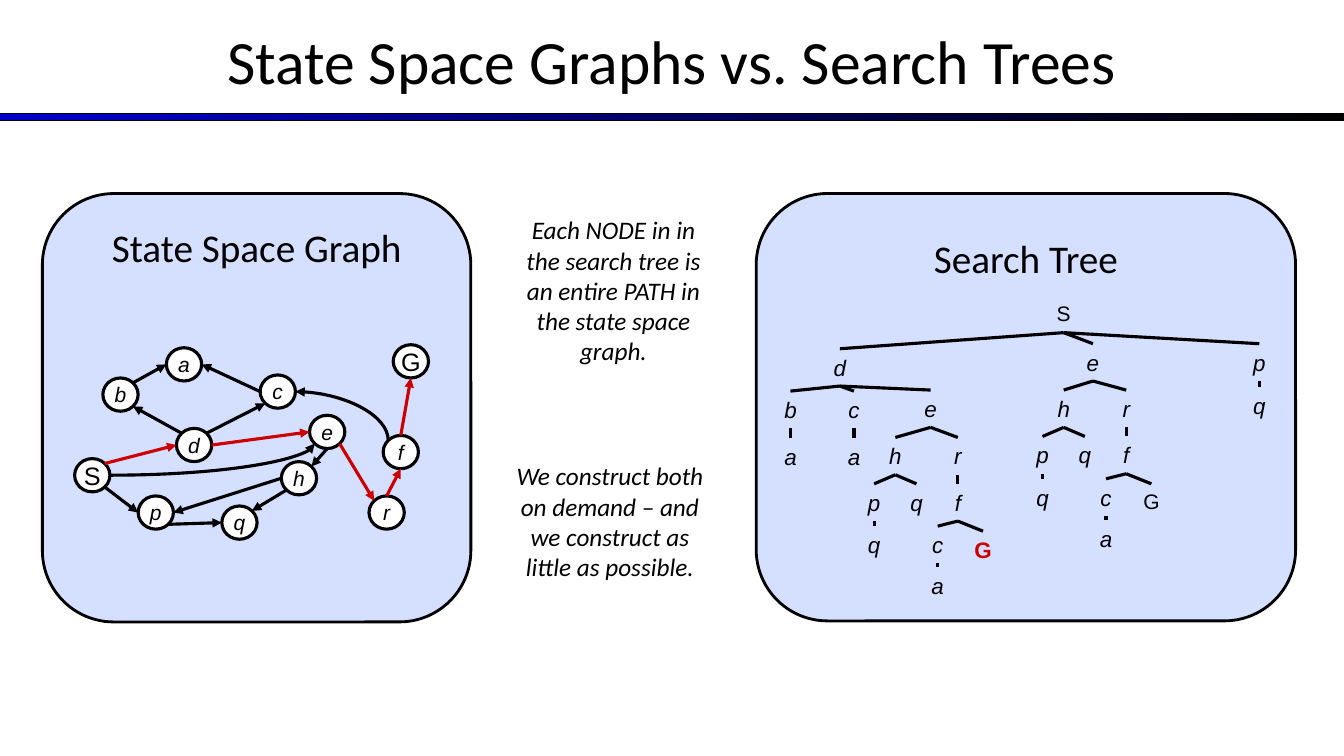
from math import copysign, sqrt

from lxml.etree import SubElement
from pptx import Presentation
from pptx.dml.color import RGBColor
from pptx.enum.shapes import MSO_CONNECTOR as LINK, MSO_SHAPE as SHAPE
from pptx.enum.text import MSO_ANCHOR as ANCHOR, PP_ALIGN as ALIGN
from pptx.oxml.ns import qn
from pptx.util import Emu, Pt

BLACK = RGBColor(0x00, 0x00, 0x00)
WHITE = RGBColor(0xFF, 0xFF, 0xFF)
RED = RGBColor(0xCC, 0x00, 0x00)
BLUE = RGBColor(0x00, 0x00, 0xCC)
PANEL = RGBColor(0xD5, 0xDF, 0xFF)

PX = 9144
SLIDE_W, SLIDE_H = 1333, 750
NODE_W, NODE_H = 35, 33
LABEL_W, GOAL_W, LABEL_H = 35, 69, 37

PANELS = [(750, 192, 535, 424), (42, 192, 425, 425)]
TEXTS = [
    ("State Space Graphs vs. Search Trees", (0, -3, 1333, 125), dict(size=44, anchor=ANCHOR.MIDDLE)),
    ("We construct both on demand – and we construct as little as possible.",
     (492, 452, 226, 131), dict(size=18, italic=True)),
    ("Each NODE in in the search tree is an entire PATH in the state space graph.",
     (500, 208, 217, 162), dict(size=18, italic=True)),
    ("Search Tree", (751, 228, 533, 57), dict(size=28)),
    ("State Space Graph", (67, 217, 375, 57), dict(size=28)),
]

NODES = {
    "S": (74, 455), "G": (390, 342), "d": (175, 425), "b": (102, 375),
    "p": (137, 492), "q": (220, 502), "c": (258, 372), "e": (307, 412),
    "h": (279, 458), "a": (165, 345), "f": (380, 432), "r": (366, 492),
}
EDGES = [
    ("S", "se", "p", "w", BLACK), ("p", "se", "q", "w", BLACK),
    ("h", "sw", "q", "ne", BLACK), ("h", "w", "p", "e", BLACK),
    ("e", "s", "h", "ne", BLACK), ("e", "se", "r", "nw", RED),
    ("r", "n", "f", "s", RED), ("f", "n", "G", "s", RED),
    ("S", "ne", "d", "w", RED), ("d", "nw", "b", "se", BLACK),
    ("b", "ne", "a", "w", BLACK), ("c", "w", "a", "e", BLACK),
    ("d", "ne", "c", "sw", BLACK), ("d", "e", "e", "w", RED),
]
CURVES = [("f", "nw", "c", "e", True), ("S", "e", "e", "sw", False)]
SIDES = {"n": (0, -1), "s": (0, 1), "e": (1, 0), "w": (-1, 0),
         "ne": (1, -1), "nw": (-1, -1), "se": (1, 1), "sw": (-1, 1)}

TOP_TREE = [
    ("S", None, "S", 1055, 293), ("d", "S", "d", 833, 346),
    ("e", "S", "e", 1084, 341), ("p", "S", "p", 1249, 341),
    ("pq", "p", "q", 1249, 384), ("db", "d", "b", 784, 388),
    ("dc", "d", "c", 847, 388), ("dba", "db", "a", 784, 435),
    ("dca", "dc", "a", 847, 435), ("de", "d", "e", 923, 387),
]
E_BRANCH = [
    ("h", "", "h", 0, 0), ("r", "", "r", 62, 0), ("hp", "h", "p", -21, 46),
    ("hq", "h", "q", 21, 46), ("hpq", "hp", "q", -21, 88),
    ("rf", "r", "f", 62, 46), ("rfc", "rf", "c", 42, 88),
    ("rfG", "rf", "G", 87, 93), ("rfca", "rfc", "a", 42, 129),
]
BRANCH_ORIGINS = {"de": (888, 434), "e": (1055, 387)}
FOUND_GOAL = "derfG"

prs = Presentation()
prs.slide_width, prs.slide_height = Emu(SLIDE_W * PX), Emu(SLIDE_H * PX)
slide = prs.slides.add_slide(prs.slide_layouts[6])
shapes = slide.shapes


def emu(*lengths):
    return [Emu(round(v * PX)) for v in lengths]


def write(sp, text, size=16, font="Calibri", color=BLACK, bold=False,
          italic=False, anchor=ANCHOR.TOP, wrap=True):
    tf = sp.text_frame
    tf.word_wrap = wrap
    tf.vertical_anchor = anchor
    p = tf.paragraphs[0]
    p.alignment = ALIGN.CENTER
    r = p.add_run()
    r.text = text
    r.font.size, r.font.name = Pt(size), font
    r.font.bold, r.font.italic = bold, italic
    r.font.color.rgb = color


def add_box(kind, at, fill, width):
    sp = shapes.add_shape(kind, *emu(*at))
    sp.shadow.inherit = False
    if fill is not None:
        sp.fill.solid()
        sp.fill.fore_color.rgb = fill
    sp.line.color.rgb, sp.line.width = BLACK, Pt(width)
    return sp


def add_link(start, end, color=BLACK, arrow=False, kind=LINK.STRAIGHT):
    cx = shapes.add_connector(kind, *emu(*start, *end))
    cx.line.color.rgb, cx.line.width = color, Pt(2.25)
    if arrow:
        SubElement(cx.line._get_or_add_ln(), qn("a:tailEnd"), type="triangle")
    SubElement(cx._element.spPr, qn("a:effectLst"))
    return cx


def site(name, side):
    x, y = NODES[name]
    dx, dy = SIDES[side]
    reach = 1 / sqrt(abs(dx) + abs(dy))
    return (x + NODE_W / 2 * (1 + dx * reach), y + NODE_H / 2 * (1 + dy * reach))


def add_curve(start, end, turned):
    if turned:
        mx, my = (start[0] + end[0]) / 2, (start[1] + end[1]) / 2
        dx, dy = start[0] - mx, start[1] - my
        start, end = (mx + dy, my - dx), (mx - dy, my + dx)
    cx = add_link(start, end, arrow=True, kind=LINK.CURVE)
    spPr = cx._element.spPr
    spPr.find(qn("a:prstGeom")).set("prst", "curvedConnector2")
    if turned:
        spPr.find(qn("a:xfrm")).set("rot", "5400000")


def add_tree():
    tree = list(TOP_TREE)
    for root, (x, y) in BRANCH_ORIGINS.items():
        tree += [(root + key, root + parent, text, x + dx, y + dy)
                 for key, parent, text, dx, dy in E_BRANCH]
    places = {key: (x, top) for key, _, _, x, top in tree}
    for key, parent, text, x, top in tree:
        state = text.islower()
        found = key == FOUND_GOAL
        w = LABEL_W if state else GOAL_W
        tb = shapes.add_textbox(*emu(x - w / 2, top, w, LABEL_H))
        write(tb, text, size=16 if state or found else 15, font="Arial",
              color=RED if found else BLACK, bold=found, italic=state)
        if parent:
            px, ptop = places[parent]
            add_link((px, ptop + LABEL_H), (x, top))


def add_graph():
    for name, (x, y) in NODES.items():
        state = name.islower()
        sp = add_box(SHAPE.FLOWCHART_CONNECTOR, (x, y, NODE_W, NODE_H), WHITE, 2.25)
        write(sp, name, size=15 if state else 18, font="Arial", italic=state,
              anchor=ANCHOR.MIDDLE, wrap=False)
    for a, a_side, b, b_side, color in EDGES:
        add_link(site(a, a_side), site(b, b_side), color, arrow=True)
    for a, a_side, b, b_side, turned in CURVES:
        add_curve(site(a, a_side), site(b, b_side), turned)


def main():
    rule = add_box(SHAPE.RECTANGLE, (0, 113, SLIDE_W, 7), None, 0.75)
    rule.fill.gradient()
    rule.fill.gradient_angle = 0
    for stop, color in zip(rule.fill.gradient_stops, (BLUE, BLACK)):
        stop.color.rgb = color
    for at in PANELS:
        add_box(SHAPE.ROUNDED_RECTANGLE, at, PANEL, 2)
    add_tree()
    add_graph()
    for text, at, style in TEXTS:
        write(shapes.add_textbox(*emu(*at)), text, **style)
    prs.save("out.pptx")


if __name__ == "__main__":
    main()
